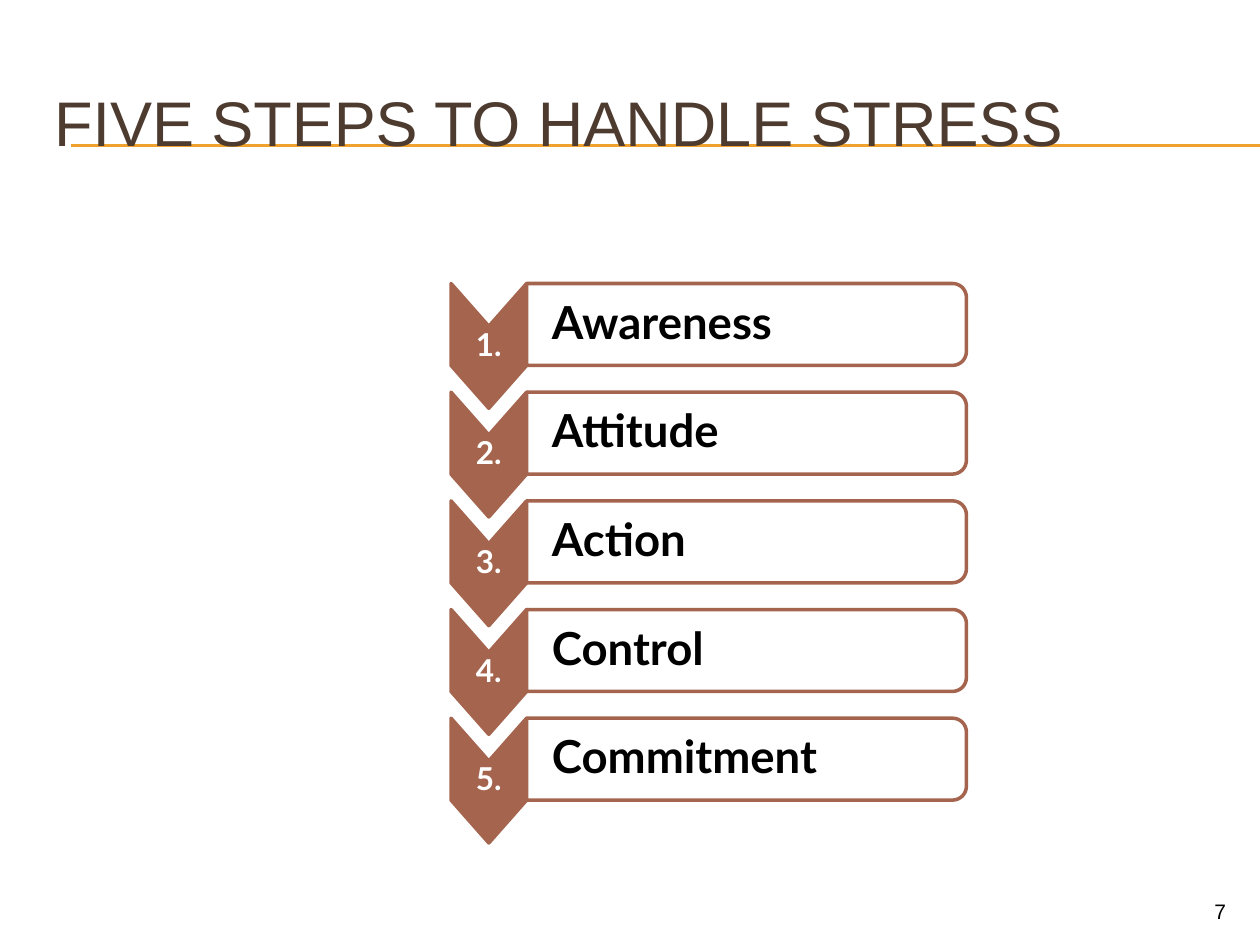
from math import cos, pi, sin

from lxml import etree
from pptx import Presentation
from pptx.dml.color import RGBColor
from pptx.enum import shapes, text
from pptx.oxml.ns import qn
from pptx.util import Inches, Pt

BROWN = RGBColor(0x4E, 0x3B, 0x30)
GOLD = RGBColor(0xF0, 0xA2, 0x2E)
RUST = RGBColor(0xA5, 0x64, 0x4E)
WHITE = RGBColor(0xFF, 0xFF, 0xFF)
BLACK = RGBColor(0, 0, 0)

STEPS = ["Awareness", "Attitude", "Action", "Control", "Commitment"]
TOP, PITCH = 2.25, 0.8625
LEFT, MIDDLE, RIGHT = 3.58, 4.18, 7.67
BAR_H, POINT_H, RADIUS = 0.65, 0.34, 0.11


def write(sp, words, insets, align, anchor, size, font, color, bold=False):
    tf = sp.text_frame
    settings = dict(zip(("margin_left", "margin_top", "margin_right", "margin_bottom"),
                        map(Inches, insets)))
    settings.update(word_wrap=True, auto_size=text.MSO_AUTO_SIZE.NONE,
                    vertical_anchor=anchor)
    for name, value in settings.items():
        setattr(tf, name, value)
    p = tf.paragraphs[0]
    p.alignment = align
    r = p.add_run()
    r.text = words
    for name, value in dict(size=Pt(size), name=font, bold=bold).items():
        setattr(r.font, name, value)
    r.font.color.rgb = color
    return p


def outline(points, fill):
    """Add a closed freeform through points given in inches."""
    points = [(Inches(x), Inches(y)) for x, y in points]
    builder = slide.shapes.build_freeform(*points[0], scale=1.0)
    builder.add_line_segments(points[1:], close=True)
    sp = builder.convert_to_shape()
    sp.shadow.inherit = False
    sp.fill.solid()
    sp.fill.fore_color.rgb = fill
    sp.line.color.rgb = RUST
    sp.line.width = Pt(2)
    etree.SubElement(sp.line._get_or_add_ln(), qn("a:round"))
    return sp


prs = Presentation()
prs.slide_width, prs.slide_height = Inches(10), Inches(7.5)
slide = prs.slides.add_slide(prs.slide_layouts[5])

# Title over a double rule
title = slide.shapes.title
for y in (1.15, 1.16):
    rule = slide.shapes.add_connector(shapes.MSO_CONNECTOR.STRAIGHT,
                                      Inches(0.56), Inches(y), Inches(10), Inches(y))
    rule.line.color.rgb = GOLD
    rule.line.width = Pt(0.75)
    etree.SubElement(rule._element.spPr, qn("a:effectLst"))
    title._element.addprevious(rule._element)
title.left, title.top, title.width, title.height = map(Inches, (0.33, 0.5, 9.5, 0.92))
write(title, "FIVE STEPS TO HANDLE STRESS", (0.1, 0.05, 0.1, 0.05),
      text.PP_ALIGN.LEFT, text.MSO_ANCHOR.MIDDLE, 36, "Arial", BROWN)

# Page number
number = slide.shapes.add_textbox(*map(Inches, (9, 7.08, 0.83, 0.27)))
write(number, "7", (0.1, 0.05, 0.1, 0.05),
      text.PP_ALIGN.RIGHT, text.MSO_ANCHOR.TOP, 12, "Arial", BLACK)

# Steps: a downward chevron and a bar rounded on its right side
for i, step in enumerate(STEPS):
    top = TOP + i * PITCH
    bottom = top + BAR_H
    center = (LEFT + MIDDLE) / 2
    chevron = outline([(MIDDLE, top), (MIDDLE, bottom), (center, bottom + POINT_H),
                       (LEFT, bottom), (LEFT, top), (center, top + POINT_H)], RUST)
    p = write(chevron, f"{i + 1}.", (0.01, 0.36, 0.01, 0.36),
              text.PP_ALIGN.CENTER, text.MSO_ANCHOR.MIDDLE, 18, "Lato", WHITE, True)
    p.line_spacing = 0.9

    angles = [k * pi / 16 for k in range(9)]
    upper = [(RIGHT - RADIUS + RADIUS * sin(a), top + RADIUS - RADIUS * cos(a))
             for a in angles]
    lower = [(x, top + bottom - y) for x, y in reversed(upper)]
    bar = outline([(MIDDLE, top), *upper, *lower, (MIDDLE, bottom)], WHITE)
    p = write(bar, step, (0.2, 0.05, 0.05, 0.05),
              text.PP_ALIGN.LEFT, text.MSO_ANCHOR.MIDDLE, 26, "Lato", BLACK, True)
    p.line_spacing = 0.9

prs.save("out.pptx")
